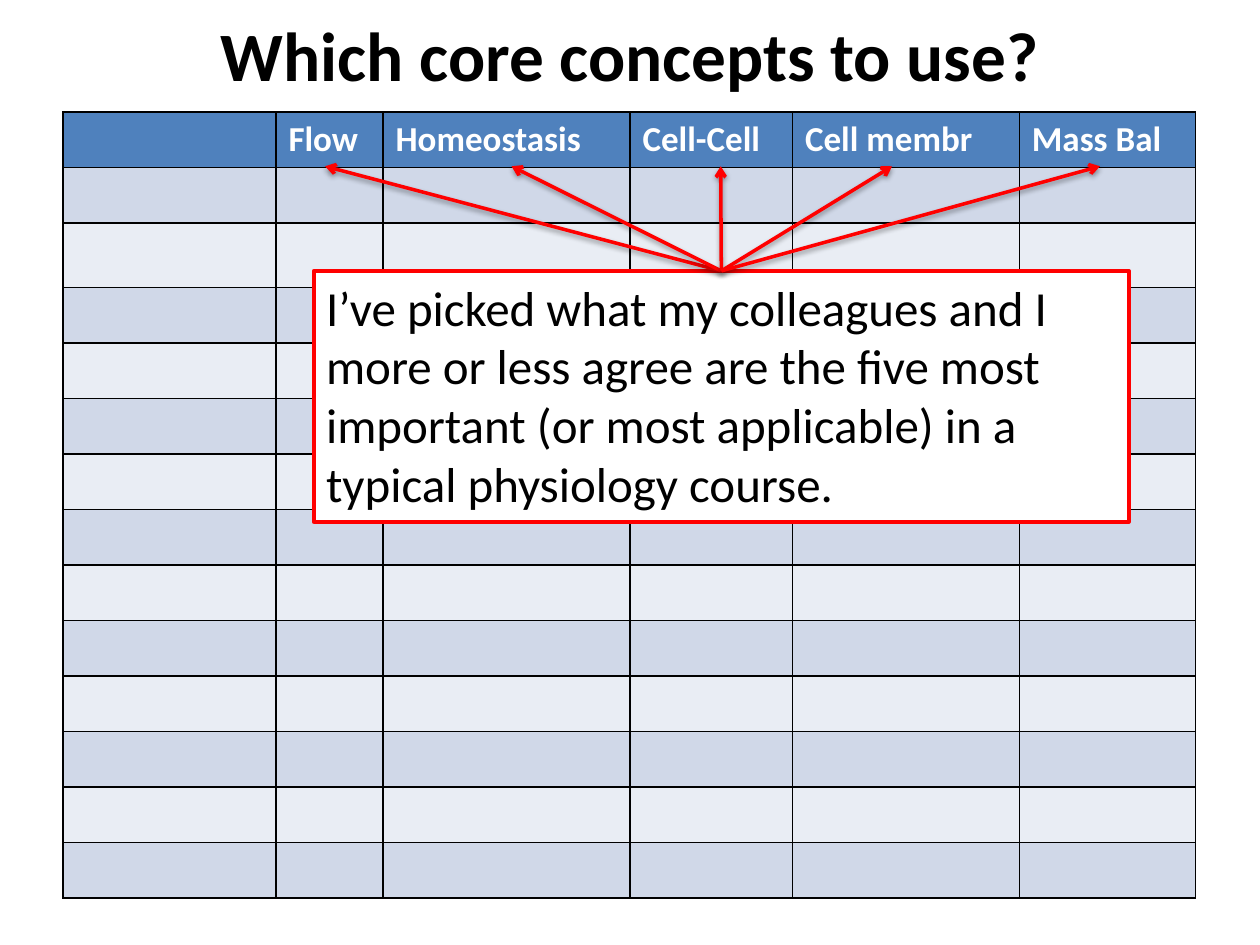
from dataclasses import dataclass

from lxml.etree import SubElement
from pptx import Presentation
from pptx.dml.color import RGBColor
from pptx.enum.shapes import MSO_CONNECTOR, MSO_SHAPE
from pptx.enum.text import MSO_ANCHOR, PP_ALIGN
from pptx.oxml.ns import qn
from pptx.util import Inches, Pt


@dataclass(frozen=True)
class Theme:
    font: str = "Calibri"
    black: str = "000000"
    white: str = "FFFFFF"
    red: str = "FF0000"
    header: str = "4F81BD"
    bands: tuple = ("D0D8E8", "E9EDF4")
    title_size: float = 39.6
    table_size: float = 20
    callout_size: float = 28


THEME = Theme()
HEADINGS = ("", "Flow", "Homeostasis", "Cell-Cell", "Cell membr", "Mass Bal")
COLUMN_WIDTHS = (1.69, 0.85, 1.96, 1.29, 1.8, 1.4)
ROW_COUNT = 14
ROW_HEIGHT = 0.41
TALL_ROW, TALL_HEIGHT = 2, 0.51
ARROW_TIPS = (2.58, 4.06, 5.72, 7.08, 8.73)
ARROW_TIP_Y = 1.32


def add_run(p, text, size, color, bold=False):
    r = p.add_run()
    r.text = text
    r.font.name = THEME.font
    r.font.size = Pt(size)
    r.font.bold = bold
    r.font.color.rgb = RGBColor.from_string(color)


def fill_solid(target, color):
    target.fill.solid()
    target.fill.fore_color.rgb = RGBColor.from_string(color)


def add_title(slide, text):
    title = slide.shapes.title
    title.left, title.top = Inches(0.5), Inches(0.08)
    title.width, title.height = Inches(9), Inches(0.69)
    tf = title.text_frame
    tf.vertical_anchor = MSO_ANCHOR.MIDDLE
    p = tf.paragraphs[0]
    p.alignment = PP_ALIGN.CENTER
    add_run(p, text, THEME.title_size, THEME.black, bold=True)


def set_borders(cell):
    tc_pr = cell._tc.get_or_add_tcPr()
    for side in ("a:lnL", "a:lnR", "a:lnT", "a:lnB"):
        ln = SubElement(tc_pr, qn(side), w=str(Pt(1)))
        fill = SubElement(ln, qn("a:solidFill"))
        SubElement(fill, qn("a:srgbClr"), val=THEME.black)


def format_cell(cell, text, color):
    set_borders(cell)
    fill_solid(cell, color)
    p = cell.text_frame.paragraphs[0]
    if text:
        add_run(p, text, THEME.table_size, THEME.white, bold=True)
    else:
        # An empty cell takes its line height from the end-of-paragraph size.
        SubElement(p._p, qn("a:endParaRPr"), sz=str(int(THEME.table_size * 100)))


def add_concept_table(slide):
    height = ROW_HEIGHT * (ROW_COUNT - 1) + TALL_HEIGHT
    table = slide.shapes.add_table(
        ROW_COUNT, len(HEADINGS), Inches(0.5), Inches(0.89), Inches(9), Inches(height)
    ).table
    for column, width in zip(table.columns, COLUMN_WIDTHS):
        column.width = Inches(width)
    for i, row in enumerate(table.rows):
        row.height = Inches(TALL_HEIGHT if i == TALL_ROW else ROW_HEIGHT)
        color = THEME.bands[(i - 1) % 2] if i else THEME.header
        for cell, heading in zip(row.cells, HEADINGS):
            format_cell(cell, "" if i else heading, color)


def add_callout(slide, text):
    sp = slide.shapes.add_shape(
        MSO_SHAPE.RECTANGLE, Inches(2.49), Inches(2.15), Inches(6.47), Inches(1.99)
    )
    sp.shadow.inherit = False
    fill_solid(sp, THEME.white)
    sp.line.color.rgb = RGBColor.from_string(THEME.red)
    sp.line.width = Pt(2.25)
    tf = sp.text_frame
    tf.word_wrap = True
    tf.vertical_anchor = MSO_ANCHOR.TOP
    p = tf.paragraphs[0]
    p.alignment = PP_ALIGN.LEFT
    add_run(p, text, THEME.callout_size, THEME.black)
    return sp


def add_soft_shadow(connector):
    effects = SubElement(connector._element.spPr, qn("a:effectLst"))
    shadow = SubElement(
        effects, qn("a:outerShdw"), blurRad=str(Pt(3.1)), dist=str(Pt(1.6)),
        dir="5400000", rotWithShape="0",
    )
    color = SubElement(shadow, qn("a:srgbClr"), val=THEME.black)
    SubElement(color, qn("a:alpha"), val="38000")


def add_arrow(slide, callout, tip_x):
    """Draw an arrow from the callout's top middle to a column heading."""
    arrow = slide.shapes.add_connector(
        MSO_CONNECTOR.STRAIGHT, callout.left + callout.width // 2, callout.top,
        Inches(tip_x), Inches(ARROW_TIP_Y),
    )
    arrow.begin_connect(callout, 0)
    arrow.line.color.rgb = RGBColor.from_string(THEME.red)
    arrow.line.width = Pt(2)
    SubElement(arrow.line._get_or_add_ln(), qn("a:tailEnd"), type="arrow")
    add_soft_shadow(arrow)


def main():
    prs = Presentation()
    prs.slide_width, prs.slide_height = Inches(10), Inches(7.5)
    slide = prs.slides.add_slide(prs.slide_layouts[5])
    add_title(slide, "Which core concepts to use?")
    add_concept_table(slide)
    callout = add_callout(
        slide,
        "I’ve picked what my colleagues and I more or less agree are the five most "
        "important (or most applicable) in a typical physiology course.",
    )
    for tip_x in ARROW_TIPS:
        add_arrow(slide, callout, tip_x)
    prs.save("out.pptx")


if __name__ == "__main__":
    main()
